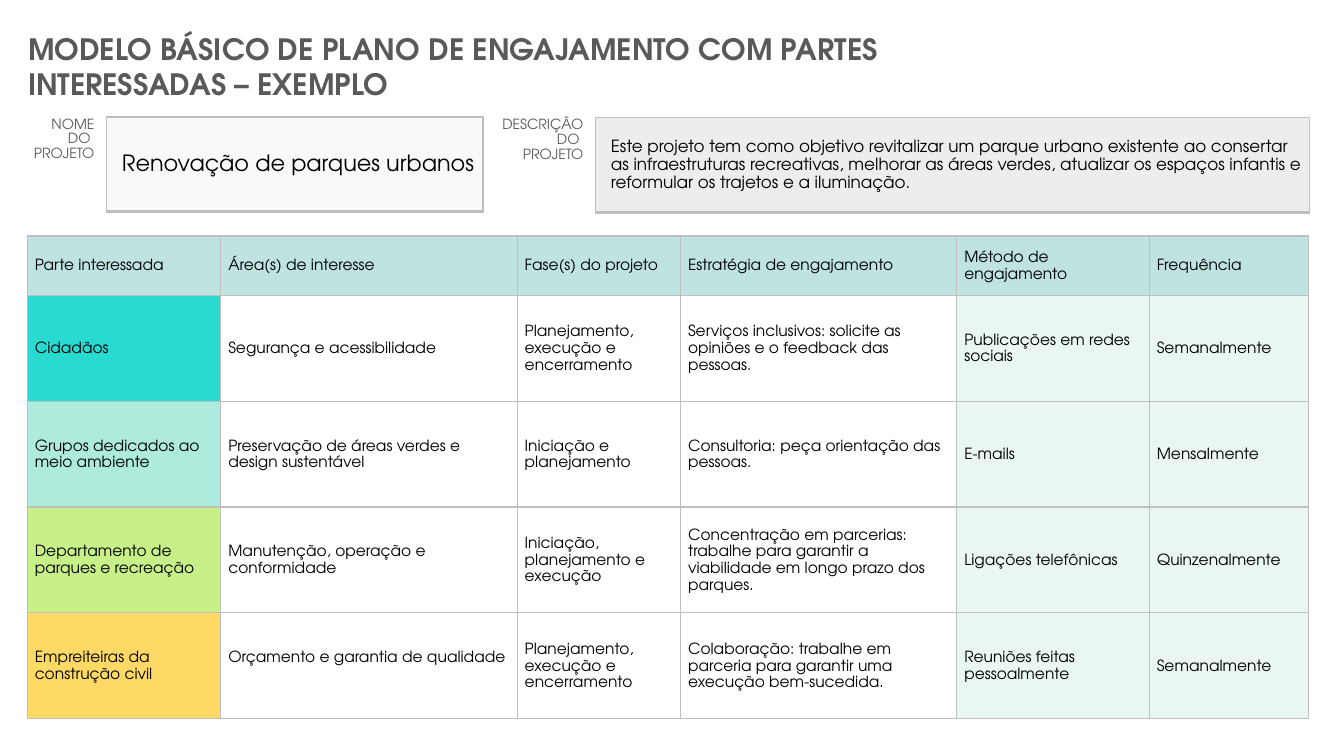
from copy import deepcopy
from dataclasses import dataclass

from lxml.etree import SubElement
from pptx import Presentation
from pptx.dml.color import RGBColor
from pptx.enum.text import MSO_ANCHOR, PP_ALIGN
from pptx.oxml.ns import qn
from pptx.util import Emu, Inches, Pt

FONT = "TeX Gyre Adventor"
BLACK = RGBColor(0x00, 0x00, 0x00)
WHITE = RGBColor(0xFF, 0xFF, 0xFF)
GREY = RGBColor(0x59, 0x59, 0x59)
BORDER = RGBColor(0xBF, 0xBF, 0xBF)
NAME_FILL = RGBColor(0xF9, 0xF9, 0xF9)
DESCRIPTION_FILL = RGBColor(0xED, 0xED, 0xED)
HEADER_FILL = RGBColor(0xBE, 0xE3, 0xE0)
CONTACT_FILL = RGBColor(0xE9, 0xF6, 0xF4)
TURQUOISE = RGBColor(0x28, 0xDA, 0xCF)
MINT = RGBColor(0xAD, 0xEB, 0xDC)
LIME = RGBColor(0xC8, 0xF0, 0x88)
AMBER = RGBColor(0xFF, 0xD9, 0x66)

# Grid: the slide is 1333 columns by 750 rows
SLIDE_W, SLIDE_H = Inches(13.33), Inches(7.5)
GRID_COLS, GRID_ROWS = 1333, 750
PAD = 7.5
LABEL_PAD = 12.5
LINE_SPACING = 1.15
SIDES = {"l": "a:lnL", "r": "a:lnR", "t": "a:lnT", "b": "a:lnB"}
THIN = dict.fromkeys(SIDES, 1)


def gx(cols: float) -> Emu:
    return Emu(round(SLIDE_W * cols / GRID_COLS))


def gy(rows: float) -> Emu:
    return Emu(round(SLIDE_H * rows / GRID_ROWS))


@dataclass
class Field:
    """A label with a boxed value beside it."""
    left: float
    top: float
    label: str
    value: str
    widths: tuple[int, int]
    fill: RGBColor
    size: int


@dataclass
class Stakeholder:
    fill: RGBColor
    texts: tuple[str, ...]


FIELDS = [
    Field(18, 116, "NOME DO \vPROJETO", "Renovação de parques urbanos",
          (88, 373), NAME_FILL, 16),
    Field(479, 116.5, "DESCRIÇÃO DO \vPROJETO",
          "Este projeto tem como objetivo revitalizar um parque urbano existente ao consertar "
          "as infraestruturas recreativas, melhorar as áreas verdes, atualizar os espaços "
          "infantis e reformular os trajetos e a iluminação.", (112, 708), DESCRIPTION_FILL, 12),
]
HEADERS = ("Parte interessada", "Área(s) de interesse", "Fase(s) do projeto",
           "Estratégia de engajamento", "Método de engajamento", "Frequência")
STAKEHOLDERS = [
    Stakeholder(TURQUOISE, (
        "Cidadãos", "Segurança e acessibilidade", "Planejamento, execução e encerramento",
        "Serviços inclusivos: solicite as opiniões e o feedback das pessoas.",
        "Publicações em redes sociais", "Semanalmente")),
    Stakeholder(MINT, (
        "Grupos dedicados ao meio ambiente", "Preservação de áreas verdes e design sustentável",
        "Iniciação e planejamento", "Consultoria: peça orientação das pessoas.",
        "E-mails", "Mensalmente")),
    Stakeholder(LIME, (
        "Departamento de parques e recreação", "Manutenção, operação e conformidade",
        "Iniciação, planejamento e execução",
        "Concentração em parcerias: trabalhe para garantir a viabilidade em longo prazo dos parques.",
        "Ligações telefônicas", "Quinzenalmente")),
    Stakeholder(AMBER, (
        "Empreiteiras da construção civil", "Orçamento e garantia de qualidade",
        "Planejamento, execução e encerramento",
        "Colaboração: trabalhe em parceria para garantir uma execução bem-sucedida.",
        "Reuniões feitas pessoalmente", "Semanalmente")),
]
PLAN_COLS = (192, 294, 162, 274, 191, 158)
PLAN_ROWS = (59, 105, 105, 105, 105)


def write(p, text: str, size: int, color: RGBColor, bold: bool = False) -> None:
    p.text = text
    for r in p.runs:
        for name, value in {"name": FONT, "size": Pt(size), "bold": bold}.items():
            setattr(r.font, name, value)
        r.font.color.rgb = color
    for br in p._p.findall(qn("a:br")):
        br.append(deepcopy(p.runs[0]._r.rPr))


def set_borders(cell, widths: dict[str, float]) -> None:
    tcPr = cell._tc.get_or_add_tcPr()
    lines = []
    for side, tag in SIDES.items():
        width = widths.get(side, 0)
        ln = SubElement(tcPr, qn(tag), w=str(Pt(width)))
        if width:
            fill = SubElement(ln, qn("a:solidFill"))
            SubElement(fill, qn("a:srgbClr"), val=str(BORDER))
        else:
            SubElement(ln, qn("a:noFill"))
        lines.append(ln)
    for i, ln in enumerate(lines):
        tcPr.insert(i, ln)


def fill_cell(cell, text: str, size: int, fill: RGBColor | None, borders: dict[str, float],
              color: RGBColor = BLACK, align=PP_ALIGN.LEFT, anchor=MSO_ANCHOR.MIDDLE,
              left: float = PAD, right: float = PAD, bottom: float = 0) -> None:
    layout = {"margin_left": gx(left), "margin_right": gx(right), "margin_top": 0,
              "margin_bottom": gy(bottom), "vertical_anchor": anchor}
    for name, value in layout.items():
        setattr(cell, name, value)
    if fill is None:
        cell.fill.background()
    else:
        cell.fill.solid()
        cell.fill.fore_color.rgb = fill
    set_borders(cell, borders)
    p = cell.text_frame.paragraphs[0]
    p.alignment, p.line_spacing = align, LINE_SPACING
    write(p, text, size, color)


def add_grid(s, left: float, top: float, cols: tuple[int, ...], rows: tuple[int, ...]):
    table = s.shapes.add_table(len(rows), len(cols), gx(left), gy(top),
                               gx(sum(cols)), gy(sum(rows))).table
    table.first_row = table.horz_banding = False
    for column, width in zip(table.columns, cols):
        column.width = gx(width)
    for row, height in zip(table.rows, rows):
        row.height = gy(height)
    return table


def add_title(s) -> None:
    tf = s.shapes.add_textbox(gx(18), gy(26), gx(913), gy(45)).text_frame
    tf.word_wrap = True
    write(tf.paragraphs[0],
          "MODELO BÁSICO DE PLANO DE ENGAJAMENTO COM PARTES INTERESSADAS – EXEMPLO",
          21, GREY, bold=True)


def add_field(s, field: Field) -> None:
    table = add_grid(s, field.left, field.top, field.widths, (94,))
    fill_cell(table.cell(0, 0), field.label, 10, None, {"r": 1}, GREY,
              PP_ALIGN.RIGHT, MSO_ANCHOR.TOP, right=LABEL_PAD)
    fill_cell(table.cell(0, 1), field.value, field.size, field.fill, THIN | {"b": 2.25},
              left=2 * PAD)


def add_plan(s) -> None:
    table = add_grid(s, 27, 234, PLAN_COLS, PLAN_ROWS)
    for j, header in enumerate(HEADERS):
        fill_cell(table.cell(0, j), header, 11, HEADER_FILL, THIN | {"t": 2.25})
    for i, stakeholder in enumerate(STAKEHOLDERS, start=1):
        fills = [stakeholder.fill] + [WHITE] * 3 + [CONTACT_FILL] * 2
        for j, (text, fill) in enumerate(zip(stakeholder.texts, fills)):
            # The budget text sits half a line higher than its row's centre
            raised = 17 if text.startswith("Orçamento") else 0
            fill_cell(table.cell(i, j), text, 11, fill, THIN, bottom=raised)


def main() -> None:
    prs = Presentation()
    prs.slide_width, prs.slide_height = SLIDE_W, SLIDE_H
    s = prs.slides.add_slide(prs.slide_layouts[6])
    add_title(s)
    for field in FIELDS:
        add_field(s, field)
    add_plan(s)
    prs.save("out.pptx")


if __name__ == "__main__":
    main()
